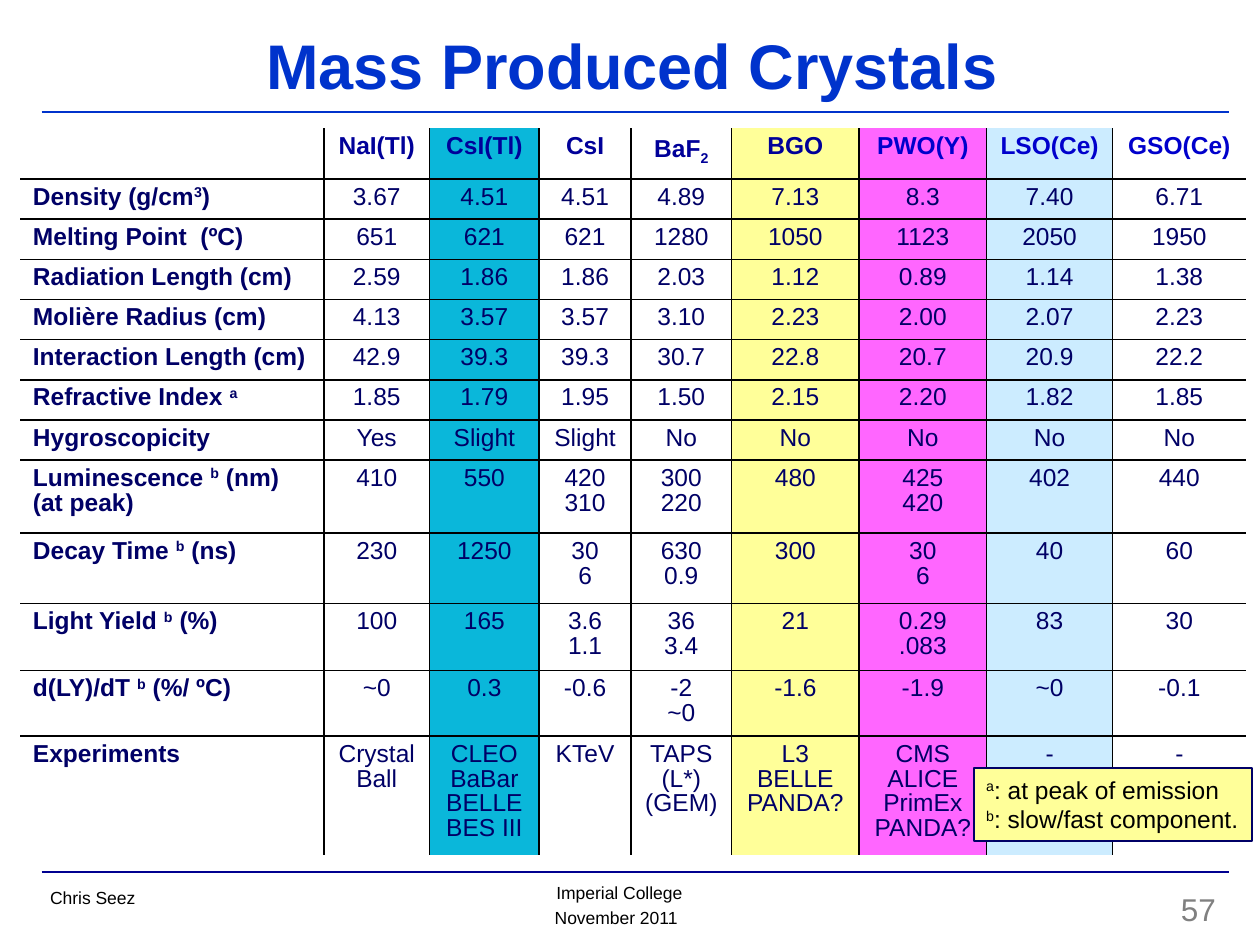
"""Build the slide comparing mass produced scintillating crystals."""
import lxml.etree
import pptx
import pptx.dml.color
import pptx.enum.shapes
import pptx.enum.text
import pptx.oxml.ns
import pptx.util

Cm = pptx.util.Cm
Pt = pptx.util.Pt
qn = pptx.oxml.ns.qn
ALIGN = pptx.enum.text.PP_ALIGN
ANCHOR = pptx.enum.text.MSO_ANCHOR

COLORS = {
    "title": "0033CC",
    "rule": "000090",
    "header": "000099",
    "header_late": "0000CC",
    "body": "000066",
    "black": "000000",
    "grey": "808080",
    "cyan": "0AB7DA",
    "white": "FFFFFF",
    "yellow": "FFFF99",
    "pink": "FF66FF",
    "ice": "CCECFF",
}
COLUMN_FILLS = [None, None, "cyan", "white", None, "yellow", "pink", "ice", None]
COLUMN_WIDTHS = [6.12, 2.13, 2.21, 1.85, 2.03, 2.57, 2.57, 2.54, 2.69]
ROW_HEIGHTS = [0.81] * 8 + [1.47, 1.42, 1.35, 1.27, 2.24]
CRYSTALS = [
    ["", "NaI(Tl)", "CsI(Tl)", "CsI", "BaF^2", "BGO", "PWO(Y)", "LSO(Ce)", "GSO(Ce)"],
    ["Density (g/cm^3^)", "3.67", "4.51", "4.51", "4.89", "7.13", "8.3", "7.40", "6.71"],
    ["Melting Point  (ºC)", "651", "621", "621", "1280", "1050", "1123", "2050", "1950"],
    ["Radiation Length (cm)", "2.59", "1.86", "1.86", "2.03", "1.12", "0.89", "1.14", "1.38"],
    ["Molière Radius (cm)", "4.13", "3.57", "3.57", "3.10", "2.23", "2.00", "2.07", "2.23"],
    ["Interaction Length (cm)", "42.9", "39.3", "39.3", "30.7", "22.8", "20.7", "20.9", "22.2"],
    ["Refractive Index ^a", "1.85", "1.79", "1.95", "1.50", "2.15", "2.20", "1.82", "1.85"],
    ["Hygroscopicity", "Yes", "Slight", "Slight", "No", "No", "No", "No", "No"],
    ["Luminescence ^b^ (nm)|(at peak)", "410", "550", "420|310", "300|220", "480",
     "425|420", "402", "440"],
    ["Decay Time ^b^ (ns)", "230", "1250", "30|6", "630|0.9", "300", "30|6", "40", "60"],
    ["Light Yield ^b^ (%)", "100", "165", "3.6|1.1", "36|3.4", "21", "0.29|.083", "83", "30"],
    ["d(LY)/dT ^b^ (%/ ºC)", "~0", "0.3", "-0.6", "-2|~0", "-1.6", "-1.9", "~0", "-0.1"],
    ["Experiments", "Crystal Ball", "CLEO BaBar BELLE|BES III", "KTeV", "TAPS|(L*)|(GEM)",
     "L3|BELLE|PANDA?", "CMS|ALICE|PrimEx|PANDA?", "-", "-"],
]


def rgb(name):
    """Return the named colour."""
    return pptx.dml.color.RGBColor.from_string(COLORS[name])


class Deck:
    """Hold the style and the current slide."""

    font = "Arial"

    def __init__(self, prs):
        """Add a title-only slide to the presentation."""
        self.s = prs.slides.add_slide(prs.slide_layouts[5])

    def fill_text(self, tf, text, size, color, bold=False, align=ALIGN.LEFT, spacing=None,
                  shift=30):
        """Set paragraphs split at bars, with shifted runs between carets."""
        for i, line in enumerate(text.split("|")):
            p = tf.paragraphs[0] if i == 0 else tf.add_paragraph()
            p.alignment = align
            p.line_spacing = spacing
            for j, piece in enumerate(line.split("^")):
                if not piece:
                    continue
                r = p.add_run()
                r.text = piece
                r.font.name = self.font
                r.font.size = Pt(size)
                r.font.bold = bold
                r.font.color.rgb = rgb(color)
                if j % 2:
                    r.font._element.set("baseline", str(shift * 1000))

    def title(self, text, box):
        """Place and format the title."""
        sp = self.s.shapes.title
        sp.left, sp.top, sp.width, sp.height = map(Cm, box)
        sp.text_frame.vertical_anchor = ANCHOR.MIDDLE
        self.fill_text(sp.text_frame, text, 36, "title", True, ALIGN.CENTER, 0.7)

    def rule(self, y, color):
        """Draw a horizontal line across the slide."""
        sp = self.s.shapes.add_connector(
            pptx.enum.shapes.MSO_CONNECTOR.STRAIGHT, Cm(0.84), Cm(y), Cm(24.77), Cm(y))
        sp.line.color.rgb = rgb(color)
        sp.line.width = Pt(1.5)
        lxml.etree.SubElement(sp._element.spPr, qn("a:effectLst"))

    def text(self, text, box, size=10, color="black", align=ALIGN.CENTER, anchor=ANCHOR.MIDDLE):
        """Add a text box."""
        tf = self.s.shapes.add_textbox(*map(Cm, box)).text_frame
        tf.word_wrap = False
        tf.vertical_anchor = anchor
        self.fill_text(tf, text, size, color, align=align)

    def note(self, text, box):
        """Add a framed footnote."""
        sp = self.s.shapes.add_shape(pptx.enum.shapes.MSO_SHAPE.RECTANGLE, *map(Cm, box))
        sp.shadow.inherit = False
        sp.fill.solid()
        sp.fill.fore_color.rgb = rgb("yellow")
        sp.line.color.rgb = rgb("body")
        sp.line.width = Pt(1)
        sp.text_frame.word_wrap = False
        sp.text_frame.vertical_anchor = ANCHOR.TOP
        self.fill_text(sp.text_frame, text, 14, "black")

    def borders(self, cell, visible):
        """Draw the left, right, top and bottom borders that are visible."""
        tcPr = cell._tc.get_or_add_tcPr()
        for side, shown in zip("LRTB", visible):
            ln = lxml.etree.SubElement(tcPr, qn(f"a:ln{side}"), w=str(Pt(1)))
            if shown:
                fill = lxml.etree.SubElement(ln, qn("a:solidFill"))
                lxml.etree.SubElement(fill, qn("a:srgbClr"), val=COLORS["black"])
            else:
                lxml.etree.SubElement(ln, qn("a:noFill"))

    def table(self, rows, left, top, widths, heights, fills):
        """Add a table with inner grid lines and coloured columns."""
        table = self.s.shapes.add_table(
            len(rows), len(widths), Cm(left), Cm(top), Cm(sum(widths)), Cm(sum(heights))).table
        table.first_row = table.horz_banding = False
        for column, width in zip(table.columns, widths):
            column.width = Cm(width)
        for i, (row, height) in enumerate(zip(rows, heights)):
            table.rows[i].height = Cm(height)
            for j, text in enumerate(row):
                cell = table.cell(i, j)
                self.borders(cell, (j > 0, j < len(row) - 1, i > 0, i < len(rows) - 1))
                if fills[j]:
                    cell.fill.solid()
                    cell.fill.fore_color.rgb = rgb(fills[j])
                else:
                    cell.fill.background()
                color = "body" if i else "header_late" if j > 5 else "header"
                self.fill_text(cell.text_frame, text, 14, color, i == 0 or j == 0,
                               ALIGN.CENTER if j else ALIGN.LEFT, 0.9, 30 if i else -25)


def main():
    """Build and save the slide."""
    prs = pptx.Presentation()
    prs.slide_width, prs.slide_height = Cm(25.4), Cm(19.05)
    deck = Deck(prs)
    deck.rule(17.58, "rule")
    deck.text("Chris Seez", (0.76, 17.75, 2.29, 0.69), align=ALIGN.LEFT, anchor=ANCHOR.TOP)
    deck.rule(2.26, "title")
    deck.text("November 2011", (9.78, 18.21, 5.28, 0.58))
    deck.text("Imperial College", (8.46, 17.68, 8.05, 0.64))
    deck.text("57", (19.48, 17.68, 5.28, 1.27), 18, "grey", ALIGN.RIGHT)
    deck.title("Mass Produced Crystals ", (1.07, 0.64, 23.7, 1.7))
    deck.table(CRYSTALS, 0.41, 2.59, COLUMN_WIDTHS, ROW_HEIGHTS, COLUMN_FILLS)
    deck.note("^a^: at peak of emission|^b^: slow/fast component.", (19.63, 15.49, 5.61, 1.47))
    prs.save("out.pptx")


if __name__ == "__main__":
    main()
